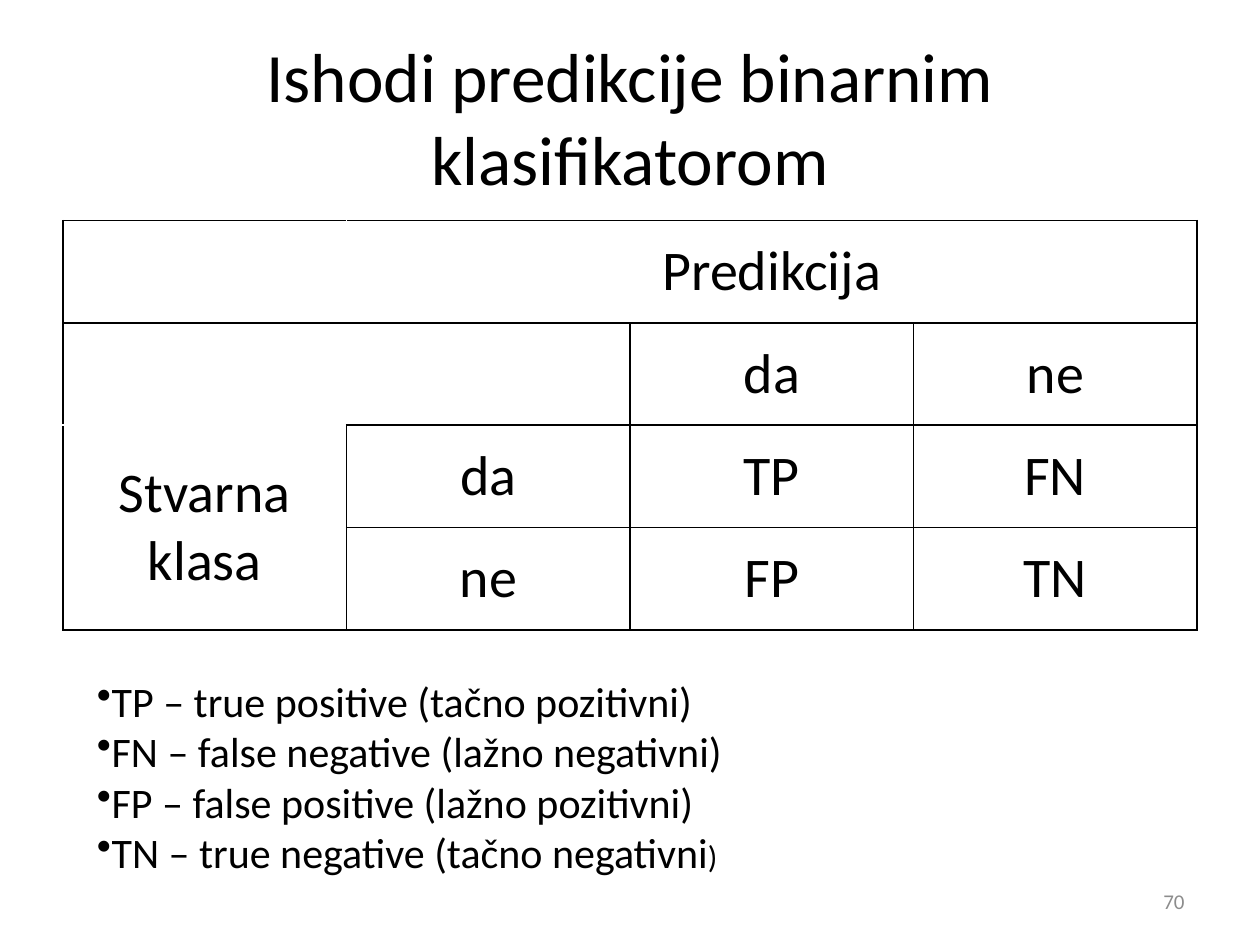
from dataclasses import dataclass

from lxml.etree import SubElement
from pptx import Presentation
from pptx.dml.color import RGBColor
from pptx.enum.text import MSO_ANCHOR as Anchor, MSO_AUTO_SIZE as AutoSize, PP_ALIGN as Align
from pptx.oxml.ns import qn
from pptx.util import Inches, Pt


@dataclass(frozen=True)
class Theme:
    font: str = "Calibri"
    ink: str = "000000"
    paper: str = "FFFFFF"
    muted: str = "8C8C8C"
    title: float = 39.6
    cell: float = 32
    note: float = 24
    small: float = 18
    number: float = 12
    border: float = 1


THEME = Theme()
MATRIX = [
    ["", "Predikcija", "", ""],
    ["", "", "da", "ne"],
    ["Stvarna\nklasa", "da", "TP", "FN"],
    ["", "ne", "FP", "TN"],
]
MERGES = [((0, 1), (0, 3)), ((2, 0), (3, 0))]
OPEN_EDGES = {(0, 0): "R", (0, 1): "L", (1, 0): "RB", (1, 1): "L", (2, 0): "TR"}
NOTES = [
    [("TP – true positive (tačno pozitivni)", THEME.note)],
    [("FN – false negative (lažno negativni)", THEME.note)],
    [("FP – false positive (lažno pozitivni)", THEME.note)],
    [("TN – true negative (tačno negativni", THEME.note), (")", THEME.small)],
]


def write_text(frame, paragraphs, color=THEME.ink, align=Align.LEFT,
               anchor=Anchor.TOP, bullet_indent=None):
    frame.word_wrap = True
    frame.vertical_anchor = anchor
    for index, runs in enumerate(paragraphs):
        paragraph = frame.add_paragraph() if index else frame.paragraphs[0]
        paragraph.alignment = align
        if bullet_indent is not None:
            properties = paragraph._p.get_or_add_pPr()
            properties.set("marL", "0")
            properties.set("indent", str(bullet_indent))
            SubElement(properties, qn("a:buChar"), char="•")
        for text, size in runs:
            run = paragraph.add_run()
            run.text = text
            run.font.name = THEME.font
            run.font.size = Pt(size)
            run.font.color.rgb = RGBColor.from_string(color)


def add_text(slide, box, paragraphs, **text_format):
    shape = slide.shapes.add_textbox(*box)
    write_text(shape.text_frame, paragraphs, **text_format)
    return shape


def set_borders(cell, open_edges):
    properties = cell._tc.get_or_add_tcPr()
    for position, edge in enumerate("LRTB"):
        color = THEME.paper if edge in open_edges else THEME.ink
        line = properties.makeelement(qn(f"a:ln{edge}"), {"w": str(Pt(THEME.border))})
        fill = SubElement(line, qn("a:solidFill"))
        SubElement(fill, qn("a:srgbClr"), val=color)
        properties.insert(position, line)


def add_matrix(slide, box):
    left, top, width, height = box
    row_count, column_count = len(MATRIX), len(MATRIX[0])
    table = slide.shapes.add_table(row_count, column_count, left, top, width, height).table
    table.first_row = table.horz_banding = False
    for start, end in MERGES:
        table.cell(*start).merge(table.cell(*end))
    for row, values in enumerate(MATRIX):
        for column, value in enumerate(values):
            cell = table.cell(row, column)
            cell.fill.solid()
            cell.fill.fore_color.rgb = RGBColor.from_string(THEME.paper)
            if cell.is_spanned:
                continue
            set_borders(cell, OPEN_EDGES.get((row, column), ""))
            cell.vertical_anchor = Anchor.MIDDLE
            if value:
                lines = [[(line, THEME.cell)] for line in value.split("\n")]
                write_text(cell.text_frame, lines, align=Align.CENTER, anchor=Anchor.MIDDLE)


def add_title(slide, box):
    add_text(slide, box, [[("Ishodi predikcije binarnim klasifikatorom", THEME.title)]],
             align=Align.CENTER, anchor=Anchor.MIDDLE)


def add_notes(slide, box):
    shape = add_text(slide, box, NOTES, bullet_indent=Inches(0.2))
    shape.text_frame.auto_size = AutoSize.SHAPE_TO_FIT_TEXT


def add_number(slide, box):
    add_text(slide, box, [[("70", THEME.number)]], color=THEME.muted,
             align=Align.RIGHT, anchor=Anchor.MIDDLE)


def main():
    presentation = Presentation()
    presentation.slide_width, presentation.slide_height = Inches(10), Inches(7.5)
    slide = presentation.slides.add_slide(presentation.slide_layouts[6])
    add_title(slide, (Inches(0.5), Inches(0.3), Inches(9), Inches(1.25)))
    add_matrix(slide, (Inches(0.5), Inches(1.75), Inches(9), Inches(3.25)))
    add_number(slide, (Inches(7.17), Inches(6.95), Inches(2.33), Inches(0.4)))
    add_notes(slide, (Inches(0.47), Inches(5.31), Inches(9.06), Inches(1.72)))
    presentation.save("out.pptx")


if __name__ == "__main__":
    main()
